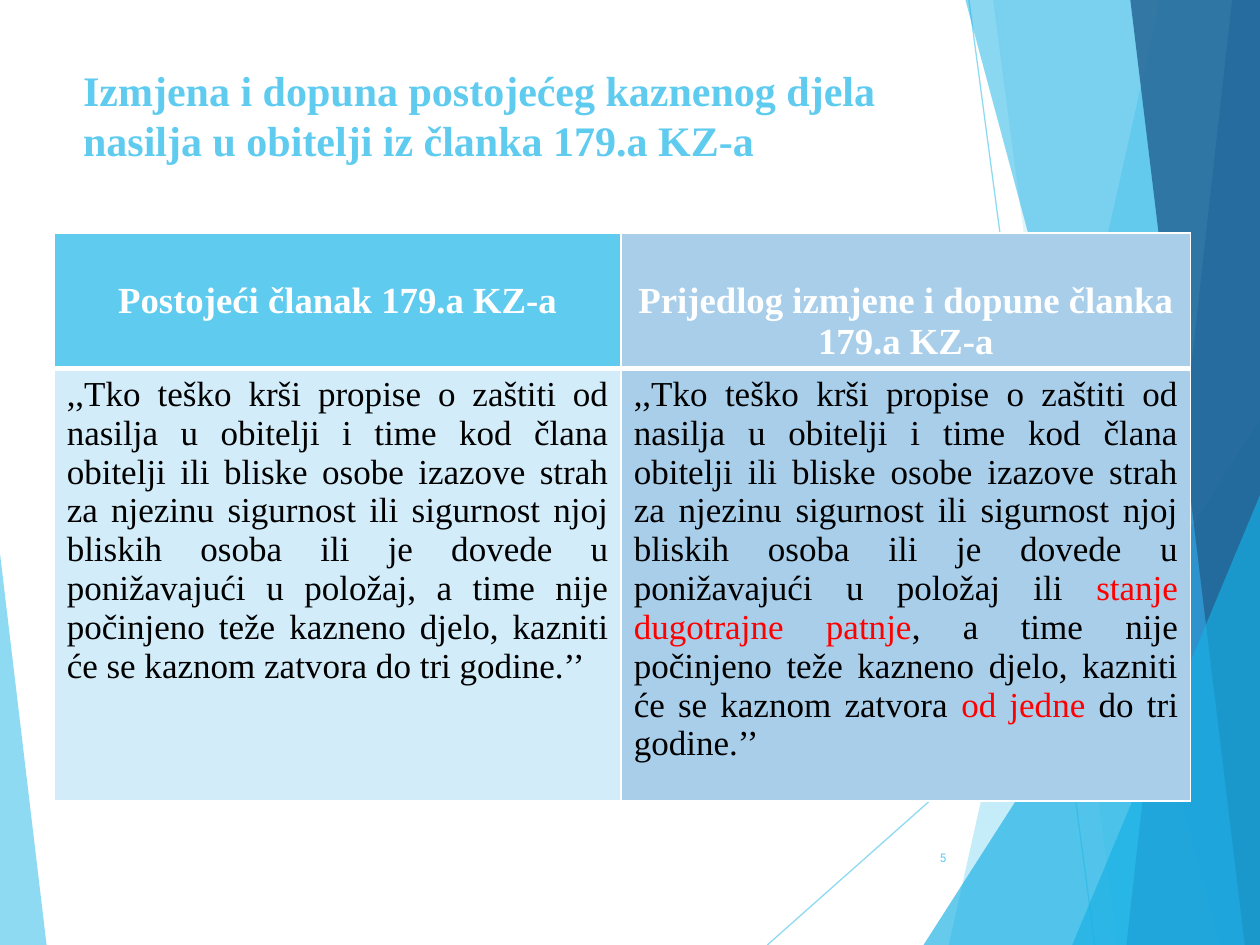
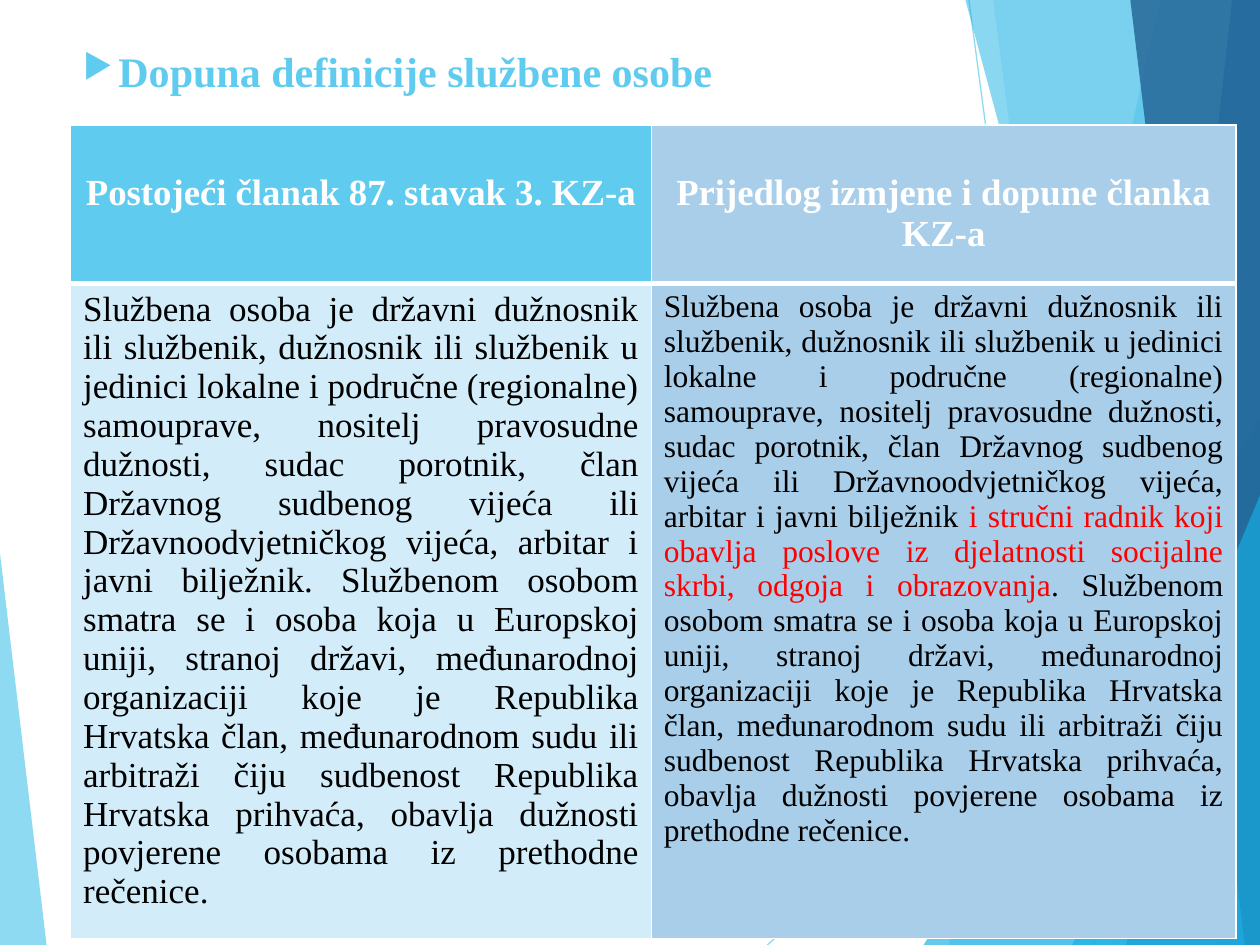
from pptx import Presentation
from pptx.dml.color import RGBColor
from pptx.enum.shapes import MSO_CONNECTOR, MSO_SHAPE
from pptx.enum.text import MSO_ANCHOR, PP_ALIGN
from pptx.oxml.ns import qn
from pptx.util import Inches, Pt
from lxml import etree

LINE, WEDGE = MSO_CONNECTOR.STRAIGHT, MSO_SHAPE.ISOSCELES_TRIANGLE
LEFT, RIGHT = PP_ALIGN.LEFT, PP_ALIGN.RIGHT
CENTER, JUSTIFY = PP_ALIGN.CENTER, PP_ALIGN.JUSTIFY
TOP, MIDDLE = MSO_ANCHOR.TOP, MSO_ANCHOR.MIDDLE

SERIF, SANS = "Times New Roman", "Roboto"
SKY, CYAN, BLUE, NAVY = "5FCBEF", "17B0E4", "2E83C3", "226292"
PALE, MIST, WHITE, BLACK, RED = "D2ECF9", "A8CEEA", "FFFFFF", "000000", "FF0000"
WIDE, HIGH = 10, 7.5

# Each ray: start, end
RAYS = [((7.69, 0), (8.69, HIGH)), ((WIDE, 4.03), (6.09, HIGH))]
# Each band runs to the right edge: top x, bottom x, colour, opacity in percent.
# Each wedge: left, top, width, apex (0 left, 1 right), colour, opacity
BACK = [(9.21, 7.53, SKY, 36), (7.88, 8.87, SKY, 20)]
FRONT = [(7.66, 9.68, CYAN, 50), (9.78, 8.94, BLUE, 70), (8.97, 9.88, NAVY, 80)]
INNER = [(7.33, 3.33, 2.67, 1, CYAN, 66)]
OUTER = [(8.51, 3.93, 1.49, 1, CYAN, 66), (0, 4.39, 0.37, 0, SKY, 70)]

HARM = (
    ",,Tko teško krši propise o zaštiti od nasilja u obitelji i time kod člana "
    "obitelji ili bliske osobe izazove strah za njezinu sigurnost ili sigurnost "
    "njoj bliskih osoba ili je dovede u ponižavajući u položaj"
)
CRIME = ", a time nije počinjeno teže kazneno djelo, kazniti će se kaznom zatvora "
TERM = "do tri godine.’’"
ROLE = (
    "Službena osoba je državni dužnosnik ili službenik, dužnosnik ili službenik u "
    "jedinici lokalne i područne (regionalne) samouprave, nositelj pravosudne "
    "dužnosti, sudac porotnik, član Državnog sudbenog vijeća ili "
    "Državnoodvjetničkog vijeća, arbitar i javni bilježnik"
)
ABROAD = (
    ". Službenom osobom smatra se i osoba koja u Europskoj uniji, stranoj državi, "
    "međunarodnoj organizaciji koje je Republika Hrvatska član, međunarodnom sudu "
    "ili arbitraži čiju sudbenost Republika Hrvatska prihvaća, obavlja dužnosti "
    "povjerene osobama iz prethodne rečenice."
)

# In each body cell every second piece is new wording, shown in red
PAGES = [
    {
        "title": "Izmjena i dopuna postojećeg kaznenog djela "
                 "nasilja u obitelji iz članka 179.a KZ-a",
        "box": (0.56, 0.46, 7.05, 1.44), "bullet": False, "number": "5",
        "spot": (0.43, 1.85), "cols": (4.5, 4.52), "rows": (1.07, 3.43),
        "heads": ("Postojeći članak 179.a KZ-a",
                  "Prijedlog izmjene i dopune članka 179.a KZ-a"),
        "texts": ([HARM + CRIME + TERM],
                  [HARM + " ili ", "stanje dugotrajne patnje", CRIME,
                   "od jedne ", TERM]),
        "sizes": (20, 20),
    },
    {
        "title": "Dopuna definicije službene osobe",
        "box": (0.56, 0.31, 8.7, 0.6), "bullet": True, "number": None,
        "spot": (0.56, 0.99), "cols": (4.61, 4.64), "rows": (1.26, 5.2),
        "heads": ("Postojeći članak 87. stavak 3. KZ-a",
                  "Prijedlog izmjene i dopune članka KZ-a"),
        "texts": ([ROLE + ABROAD],
                  [ROLE + " ", "i stručni radnik koji obavlja poslove iz "
                   "djelatnosti socijalne skrbi, odgoja i obrazovanja", ABROAD]),
        "sizes": (20, 18),
    },
]


def rgb(code):
    return RGBColor.from_string(code)


def inches(nums):
    return [Inches(n) for n in nums]


def add(parent, tag, **attrs):
    return etree.SubElement(parent, qn(tag), attrs)


def fade(color, share):
    """Set the opacity of a solid colour element, in percent."""
    add(color, "a:alpha", val=str(share * 1000))


def paint(shape, code, share):
    shape.shadow.inherit = False
    shape.line.fill.background()
    shape.fill.solid()
    shape.fill.fore_color.rgb = rgb(code)
    fade(shape.element.spPr.find(".//" + qn("a:srgbClr")), share)


def style(para, size, code, align, bold=False, name=SERIF):
    para.alignment = align
    font = para.font
    font.name, font.size, font.bold = name, Pt(size), bold
    font.color.rgb = rgb(code)


def draw_ray(shapes, start, end):
    ray = shapes.add_connector(LINE, *inches(start + end))
    ray.line.width = Pt(0.75)
    ray.line.color.rgb = rgb(SKY)
    props = ray.element.spPr
    fade(props.find(".//" + qn("a:srgbClr")), 70)
    add(props, "a:effectLst")


def draw_band(shapes, top, foot, code, share):
    pen = shapes.build_freeform(Inches(top), Inches(-0.01))
    ends = [(WIDE, -0.01), (WIDE, HIGH), (foot, HIGH)]
    pen.add_line_segments([inches(end) for end in ends], close=True)
    paint(pen.convert_to_shape(), code, share)


def draw_wedge(shapes, left, top, width, apex, code, share):
    wedge = shapes.add_shape(WEDGE, *inches((left, top, width, HIGH - top)))
    wedge.adjustments[0] = apex
    paint(wedge, code, share)


def dress(layout, slide):
    """Draw the shared backdrop and hand it over to the layout."""
    shapes = slide.shapes
    held = len(shapes)
    for draw, items in ((draw_ray, RAYS), (draw_band, BACK), (draw_wedge, INNER),
                        (draw_band, FRONT), (draw_wedge, OUTER)):
        for item in items:
            draw(shapes, *item)
    for shape in list(shapes)[held:]:
        layout.shapes.element.append(shape.element)


def set_title(slide, text, box, bullet):
    title = slide.shapes.title
    title.left, title.top, title.width, title.height = inches(box)
    frame = title.text_frame
    frame.word_wrap, frame.vertical_anchor = True, TOP
    frame.text = text
    para = frame.paragraphs[0]
    style(para, 24, SKY, LEFT, True)
    if bullet:
        props = para._p.get_or_add_pPr()
        indent = Inches(0.28)
        props.set("marL", str(indent))
        props.set("indent", str(-indent))
        marks = [etree.Element(qn("a:buClr")),
                 etree.Element(qn("a:buSzPct"), val="80000"),
                 etree.Element(qn("a:buChar"), char="▶")]
        add(marks[0], "a:srgbClr", val=SKY)
        for spot, mark in enumerate(marks):
            props.insert(spot, mark)


def edge(cell, row):
    """Give a cell white borders, thick between head and body."""
    props = cell._tc.get_or_add_tcPr()
    thick = "a:lnT" if row else "a:lnB"
    for tag in ("a:lnL", "a:lnR", "a:lnT", "a:lnB"):
        line = add(props, tag, w=str(Pt(3 if tag == thick else 1)))
        add(add(line, "a:solidFill"), "a:srgbClr", val=WHITE)


def fill_cell(cell, row, code, parts, size):
    edge(cell, row)
    cell.fill.solid()
    cell.fill.fore_color.rgb = rgb(code)
    para = cell.text_frame.paragraphs[0]
    if row:
        style(para, size, BLACK, JUSTIFY)
    else:
        cell.margin_top = Inches(0.38)
        style(para, size, WHITE, CENTER, True)
    for turn, part in enumerate(parts):
        run = para.add_run()
        run.text = part
        if turn % 2:
            run.font.color.rgb = rgb(RED)


def add_grid(slide, page):
    cols, rows = page["cols"], page["rows"]
    area = inches((*page["spot"], sum(cols), sum(rows)))
    table = slide.shapes.add_table(len(rows), len(cols), *area).table
    for row, high in zip(table.rows, rows):
        row.height = Inches(high)
    for num, wide in enumerate(cols):
        table.columns[num].width = Inches(wide)
        fill_cell(table.cell(0, num), 0, (SKY, MIST)[num], [page["heads"][num]], 21)
        fill_cell(table.cell(1, num), 1, (PALE, MIST)[num],
                  page["texts"][num], page["sizes"][num])


def add_number(slide, text):
    box = slide.shapes.add_textbox(*inches((7.05, 6.61, 0.56, 0.4)))
    frame = box.text_frame
    frame.word_wrap, frame.vertical_anchor = True, MIDDLE
    frame.text = text
    style(frame.paragraphs[0], 6.8, SKY, RIGHT, name=SANS)


def main():
    deck = Presentation()
    deck.slide_width, deck.slide_height = inches((WIDE, HIGH))
    layout = deck.slide_layouts[5]
    for num, page in enumerate(PAGES):
        slide = deck.slides.add_slide(layout)
        if num == 0:
            dress(layout, slide)
        set_title(slide, page["title"], page["box"], page["bullet"])
        add_grid(slide, page)
        if page["number"]:
            add_number(slide, page["number"])
    deck.save("out.pptx")


if __name__ == "__main__":
    main()
